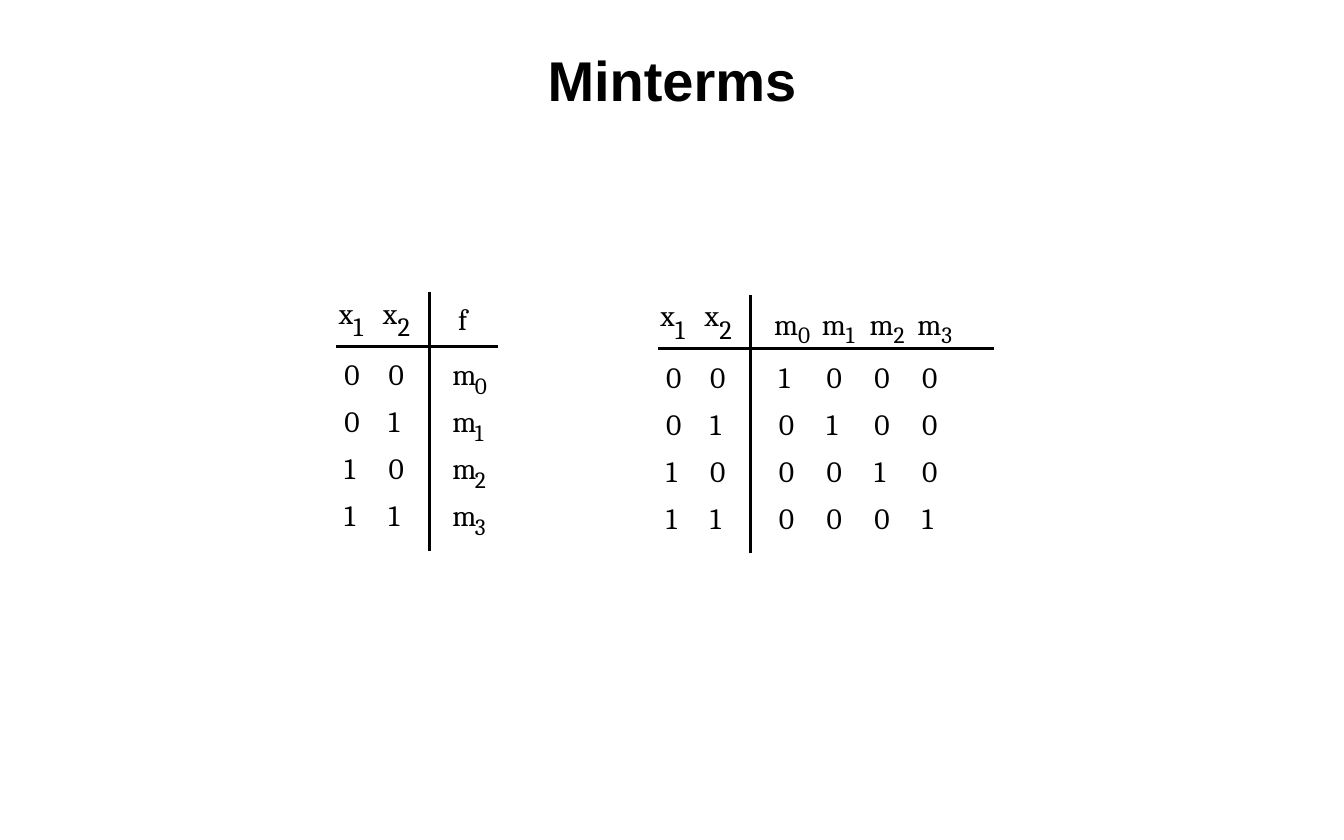
"""Build a slide with two truth tables that explain minterms."""
from dataclasses import dataclass
from itertools import product

from lxml import etree
from pptx import Presentation
from pptx.dml.color import RGBColor
from pptx.enum.shapes import MSO_CONNECTOR
from pptx.enum.text import MSO_ANCHOR, MSO_AUTO_SIZE, PP_ALIGN
from pptx.oxml.ns import qn
from pptx.slide import Slide
from pptx.text.text import TextFrame
from pptx.util import Pt

STRAIGHT = MSO_CONNECTOR.STRAIGHT
MIDDLE = MSO_ANCHOR.MIDDLE
CENTER = PP_ALIGN.CENTER
GROW = MSO_AUTO_SIZE.SHAPE_TO_FIT_TEXT


@dataclass(frozen=True)
class Theme:
    """Colours, fonts and type sizes of the slide."""
    ink: RGBColor = RGBColor(0, 0, 0)
    head: str = "Arial"
    body: str = "Cambria"
    title: int = 36
    text: int = 19
    sub: int = 17
    small: int = 15
    line: int = 2


@dataclass(frozen=True)
class Table:
    """Corner and width of a truth table, in points."""
    left: float
    top: float
    width: float


THEME = Theme()
BITS = list(product("01", repeat=2))
ROW = 30.25
FIRST = 41
INPUT = 28.4
TERM = 30.7
RULE = 34.5
STEM = 59.9
HEIGHT = 166.3
TERMS = 74.9


def add_run(frame: TextFrame, text: str, size: int, font: str, bold: bool = False) -> None:
    """Add one styled run to the first paragraph."""
    run = frame.paragraphs[0].add_run()
    run.text = text
    run.font.size = Pt(size)
    run.font.name = font
    run.font.bold = bold
    run.font.color.rgb = THEME.ink


def add_sign(slide: Slide, text: str, left: float, top: float, width: float,
             size: int = THEME.text) -> None:
    """Place one sign in a text box without margins."""
    box = slide.shapes.add_textbox(Pt(left), Pt(top), Pt(width), Pt(size * 1.2))
    frame = box.text_frame
    frame.margin_left = frame.margin_right = frame.margin_top = frame.margin_bottom = 0
    frame.word_wrap = False
    frame.auto_size = GROW
    add_run(frame, text, size, THEME.body)


def add_input(slide: Slide, index: int, left: float, top: float) -> None:
    """Place an input name with its index."""
    add_sign(slide, "x", left, top, 14.4)
    add_sign(slide, str(index), left + 9.4, top + 10.1, 13, THEME.sub)


def add_term(slide: Slide, index: int, left: float, top: float, shift: float) -> None:
    """Place a minterm name with its index."""
    add_sign(slide, "m", left, top, 19.4)
    add_sign(slide, str(index), left + shift, top + 9.4, 11.5, THEME.small)


def add_line(slide: Slide, left: float, top: float, right: float, bottom: float) -> None:
    """Draw one rule."""
    line = slide.shapes.add_connector(STRAIGHT, Pt(left), Pt(top), Pt(right), Pt(bottom))
    line.line.color.rgb = THEME.ink
    line.line.width = Pt(THEME.line)
    etree.SubElement(line._element.spPr, qn("a:effectLst"))


def add_frame(slide: Slide, table: Table) -> None:
    """Draw the rules, the input names and the input values."""
    left, top = table.left, table.top
    add_line(slide, left + table.width, top + RULE, left, top + RULE)
    add_line(slide, left + STEM, top + HEIGHT, left + STEM, top)
    for col in range(2):
        add_input(slide, col + 1, left + 1.8 + col * INPUT, top + 1.5)
    for row, bits in enumerate(BITS):
        for col, bit in enumerate(bits):
            add_sign(slide, bit, left + 5.4 + col * INPUT, top + FIRST + row * ROW, 14.4)


def add_names(slide: Slide, table: Table) -> None:
    """Fill a table with one minterm name for each row."""
    add_frame(slide, table)
    add_sign(slide, "f", table.left + 78.5, table.top + 5.8, 11.5)
    for row in range(len(BITS)):
        add_term(slide, row, table.left + TERMS, table.top + FIRST + row * ROW, 14.4)


def add_values(slide: Slide, table: Table) -> None:
    """Fill a table with the value of each minterm in each row."""
    add_frame(slide, table)
    for col in range(len(BITS)):
        left = table.left + TERMS + col * TERM
        add_term(slide, col, left, table.top + 7.2, 15.4)
        for row in range(len(BITS)):
            value = str(int(row == col))
            add_sign(slide, value, left + 3, table.top + FIRST + row * ROW, 9.4)


def add_title(slide: Slide, text: str) -> None:
    """Fill and place the title."""
    title = slide.shapes.title
    title.left, title.top, title.width, title.height = Pt(0), Pt(24), Pt(864), Pt(54)
    frame = title.text_frame
    frame.vertical_anchor = MIDDLE
    frame.paragraphs[0].alignment = CENTER
    add_run(frame, text, THEME.title, THEME.head, True)


def main() -> None:
    """Build and save the slide."""
    deck = Presentation()
    deck.slide_width, deck.slide_height = Pt(864), Pt(540)
    slide = deck.slides.add_slide(deck.slide_layouts[5])
    add_title(slide, "Minterms")
    add_names(slide, Table(216, 188, 104.4))
    add_values(slide, Table(422.8, 189.5, 216))
    deck.save("out.pptx")


if __name__ == "__main__":
    main()
